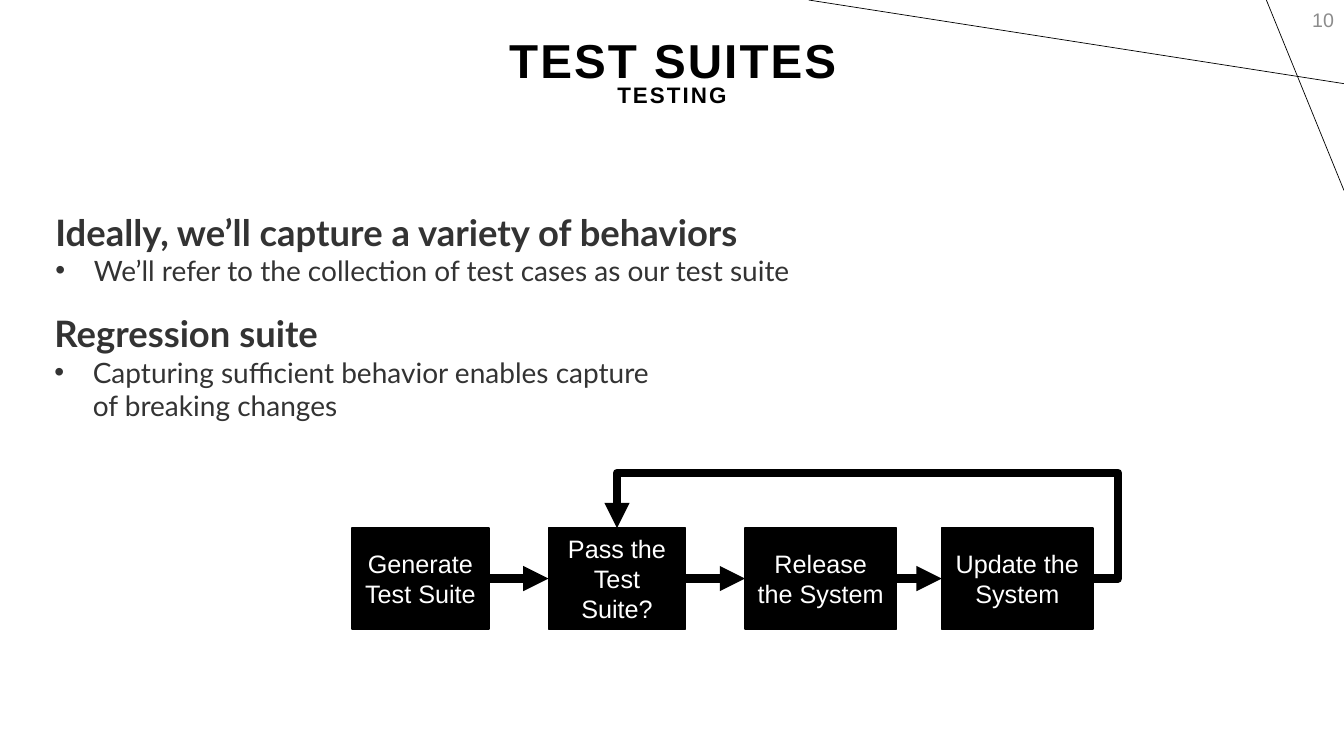
import pptx
import pptx.util
import pptx.dml.color
import pptx.enum.shapes
import pptx.enum.text
import pptx.oxml.ns
import lxml.etree

Inches = pptx.util.Inches
Pt = pptx.util.Pt
RGBColor = pptx.dml.color.RGBColor
Align = pptx.enum.text.PP_ALIGN
Anchor = pptx.enum.text.MSO_ANCHOR
Connector = pptx.enum.shapes.MSO_CONNECTOR
qn = pptx.oxml.ns.qn

BLACK = RGBColor(0x00, 0x00, 0x00)
WHITE = RGBColor(0xFF, 0xFF, 0xFF)
DARK_GREY = RGBColor(0x33, 0x33, 0x33)
PAGE_GREY = RGBColor(0x8C, 0x8C, 0x8C)


def add_span(para, text, size, color, font="Arial", bold=False, spacing=0):
    span = para.add_run()
    span.text = text
    span.font.name = font
    span.font.size = Pt(size)
    span.font.bold = bold
    span.font.color.rgb = color
    if spacing:
        span.font._element.set("spc", str(int(spacing * 100)))


def add_line(kind, start, end, width, arrow=False):
    line = page.shapes.add_connector(
        kind, Inches(start[0]), Inches(start[1]), Inches(end[0]), Inches(end[1]))
    line.line.color.rgb = BLACK
    line.line.width = Pt(width)
    if arrow:
        lxml.etree.SubElement(line.line._get_or_add_ln(), qn("a:tailEnd"), type="triangle")
    lxml.etree.SubElement(line._element.spPr, qn("a:effectLst"))
    return line


deck = pptx.Presentation()
deck.slide_width = Inches(13.33)
deck.slide_height = Inches(7.5)
page = deck.slides.add_slide(deck.slide_layouts[3])  # Two Content
for holder in list(page.placeholders):
    if holder.placeholder_format.idx > 2:
        holder._element.getparent().remove(holder._element)

# Corner lines
add_line(Connector.STRAIGHT, (13.33, 0.83), (8.02, 0), 0.5)
add_line(Connector.STRAIGHT, (12.56, 0), (13.33, 1.89), 0.5)

# Title, subtitle and page number
title = page.shapes.title
title.left, title.top, title.width, title.height = (
    Inches(0.02), Inches(-0.1), Inches(13.31), Inches(1.45))
subtitle = page.shapes.add_textbox(Inches(0.01), Inches(0.23), Inches(13.31), Inches(1.45))
for box, text, size in ((title, "TEST SUITES", 34), (subtitle, "TESTING", 16)):
    frame = box.text_frame
    frame.word_wrap = True
    frame.auto_size = pptx.enum.text.MSO_AUTO_SIZE.NONE
    frame.vertical_anchor = Anchor.MIDDLE
    para = frame.paragraphs[0]
    para.alignment = Align.CENTER
    para.line_spacing = 0.9
    add_span(para, text, size, BLACK, bold=True, spacing=1.5)

number = page.shapes.add_textbox(Inches(10.33), Inches(0), Inches(3), Inches(0.4))
number.text_frame.word_wrap = True
number.text_frame.vertical_anchor = Anchor.MIDDLE
number.text_frame.paragraphs[0].alignment = Align.RIGHT
add_span(number.text_frame.paragraphs[0], "10", 14, PAGE_GREY)

# Headed lists
lists = (
    (1, 0.45, 2.03, 7.62, 0.88, "Ideally, we’ll capture a variety of behaviors",
     "We’ll refer to the collection of test cases as our test suite"),
    (2, 0.44, 3.04, 6.41, 1.21, "Regression suite",
     "Capturing sufficient behavior enables capture of breaking changes"),
)
for index, left, top, width, height, heading, point in lists:
    body = page.placeholders[index]
    body.left, body.top, body.width, body.height = (
        Inches(left), Inches(top), Inches(width), Inches(height))
    frame = body.text_frame
    frame.word_wrap = True
    frame.auto_size = pptx.enum.text.MSO_AUTO_SIZE.SHAPE_TO_FIT_TEXT
    frame.vertical_anchor = Anchor.TOP
    heading_para = frame.paragraphs[0]
    point_para = frame.add_paragraph()
    for para, indent in ((heading_para, 0), (point_para, 0.38)):
        para.space_before = Pt(0)
        props = para._element.get_or_add_pPr()
        props.set("marL", str(Inches(indent)))
        props.set("indent", str(-Inches(indent)))
        if indent:
            lxml.etree.SubElement(props, qn("a:buFont"), typeface="Arial")
            lxml.etree.SubElement(props, qn("a:buChar"), char="•")
        else:
            lxml.etree.SubElement(props, qn("a:buNone"))
    add_span(heading_para, heading, 26, DARK_GREY, "Lato", bold=True)
    add_span(point_para, point, 20, DARK_GREY, "Lato")

# Process steps
steps = (("Generate Test Suite", 1.36), ("Pass the Test Suite?", 1.36),
         ("Release the System", 1.5), ("Update the System", 1.5))
step_boxes = []
for position, (text, width) in enumerate(steps):
    box = page.shapes.add_shape(
        pptx.enum.shapes.MSO_SHAPE.RECTANGLE,
        Inches(3.49 + 1.95 * position), Inches(5.24), Inches(width), Inches(1))
    box.shadow.inherit = False
    box.fill.solid()
    box.fill.fore_color.rgb = BLACK
    box.line.color.rgb = BLACK
    box.line.width = Pt(1)
    box.text_frame.word_wrap = True
    box.text_frame.vertical_anchor = Anchor.MIDDLE
    para = box.text_frame.paragraphs[0]
    para.alignment = Align.CENTER
    add_span(para, text, 18, WHITE)
    step_boxes.append(box)

# Arrows between steps
for source, target in zip(step_boxes, step_boxes[1:]):
    arrow = add_line(Connector.STRAIGHT, (0, 0), (1, 1), 6, arrow=True)
    arrow.begin_connect(source, 3)
    arrow.end_connect(target, 1)

# Loop from the last step back over the top to the second
loop = add_line(Connector.ELBOW, (10.84, 5.74), (6.12, 5.24), 6, arrow=True)
geometry = loop._element.spPr.find(qn("a:prstGeom"))
geometry.set("prst", "bentConnector4")
guides = geometry.find(qn("a:avLst"))
if guides is None:
    guides = lxml.etree.SubElement(geometry, qn("a:avLst"))
for name, value in (("adj1", -5300), ("adj2", 209500)):
    lxml.etree.SubElement(guides, qn("a:gd"), name=name, fmla=f"val {value}")

deck.save("out.pptx")
